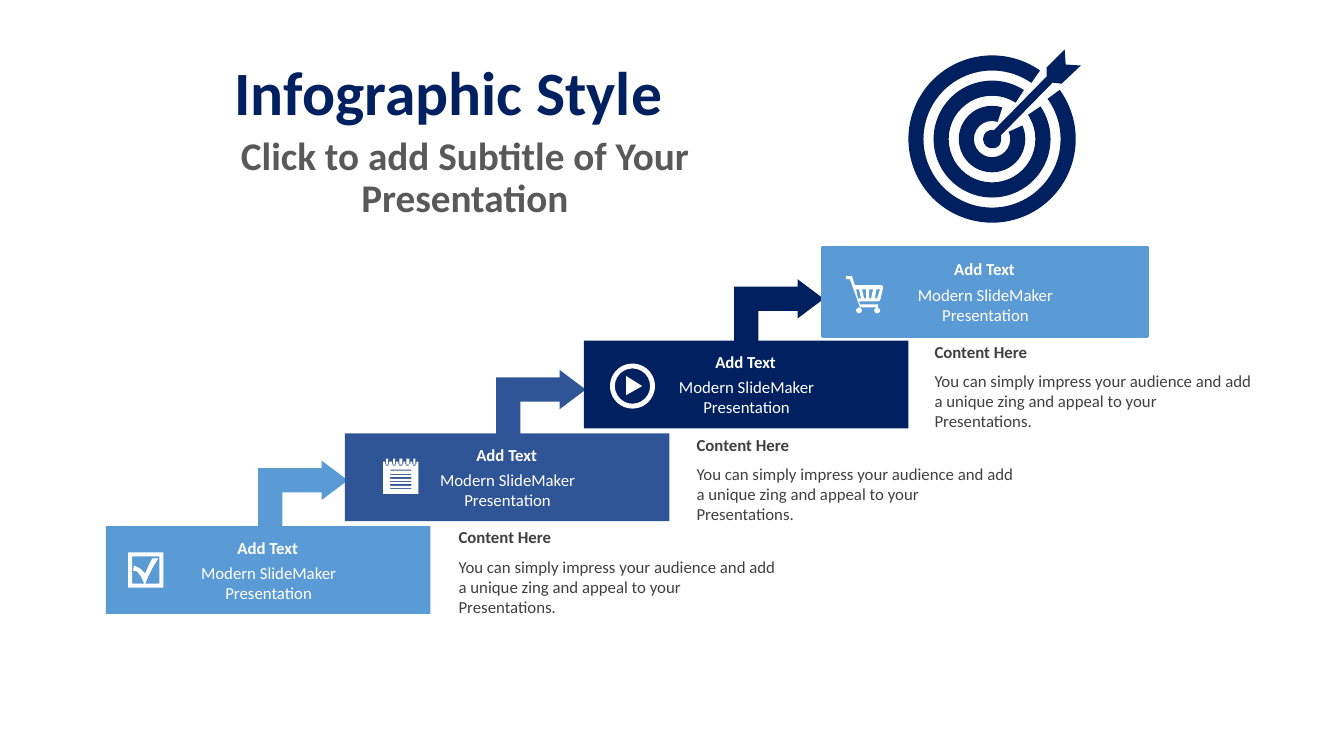
from math import cos, radians, sin

from pptx import Presentation
from pptx.dml.color import RGBColor
from pptx.enum.shapes import MSO_SHAPE
from pptx.enum.text import MSO_ANCHOR, PP_ALIGN
from pptx.util import Inches, Pt

RECTANGLE, BENT_ARROW = MSO_SHAPE.RECTANGLE, MSO_SHAPE.BENT_UP_ARROW
DONUT, BLOCK_ARC = MSO_SHAPE.DONUT, MSO_SHAPE.BLOCK_ARC
CENTER, LEFT = PP_ALIGN.CENTER, PP_ALIGN.LEFT
MIDDLE, TOP = MSO_ANCHOR.MIDDLE, MSO_ANCHOR.TOP
SKY = RGBColor(0x5B, 0x9B, 0xD5)
BLUE = RGBColor(0x2F, 0x55, 0x97)
NAVY = RGBColor(0x00, 0x20, 0x60)
GRAY = RGBColor(0x59, 0x59, 0x59)
DARK = RGBColor(0x40, 0x40, 0x40)
WHITE = RGBColor(0xFF, 0xFF, 0xFF)
FONT = "Calibri"

# Content
TITLE = "Infographic Style"
SUBTITLE = "Click to add Subtitle of Your Presentation"
STEP_HEAD, STEP_BODY = "Add Text", "Modern SlideMaker Presentation"
NOTE_HEAD = "Content Here"
NOTE_BODY = ("You can simply impress your audience and add a unique zing "
             "and appeal to your Presentations.")
# Colour, icon and icon offset inside the box, from the lowest step up
STEPS = [
    (SKY, "check", (0.22, 0.26)),
    (BLUE, "notepad", (0.38, 0.25)),
    (NAVY, "play", (0.26, 0.23)),
    (SKY, "cart", (0.23, 0.28)),
]

# Staircase grid, in inches
STEP_LEFT, STEP_TOP = 1.05, 5.22
STEP_RIGHT, STEP_UP = 2.37, 0.92
STEP_W, STEP_H = 3.22, 0.87
ARROW_LEFT, ARROW_TOP, ARROW_W, ARROW_H = 2.68, 4.45, 0.65, 0.89
ARROW_RIGHT, ARROW_UP = 2.36, 0.9
NOTE_LEFT, NOTE_TOP, NOTE_W = 4.45, 5.18, 3.35
NOTE_RIGHT, NOTE_UP = 2.36, 0.92


# Outlines, in hundredths of an inch from the icon's corner
def arc(cx, cy, r, start, end, count):
    angles = [radians(start + (end - start) * i / count) for i in range(count + 1)]
    return [(cx + r * cos(a), cy + r * sin(a)) for a in angles]


def rect(left, top, right, bottom):
    return [(left, top), (right, top), (right, bottom), (left, bottom)]


def notepad():
    holes = [4.2 + 6.7 * i for i in range(5)]
    page = [(0, 3)]
    for x in holes:
        page += [(x - 2.3, 3)] + arc(x, 5, 2.3, 180, 0, 3) + [(x + 2.3, 3)]
    page += [(35, 3), (35, 34.5), (0, 34.5)]
    rings = [rect(x - 1.2, 0, x + 1.2, 6) for x in holes]
    lines = [rect(7, 10.9 + 3.6 * i, 28, 12.4 + 3.6 * i) for i in range(6)]
    return [page] + rings + lines


ICONS = {
    "check": [
        rect(0, 0, 35, 35),
        [(4, 4), (4, 31), (16, 31), (13, 24), (9, 19), (5, 18), (6, 13), (12, 15.5),
         (17, 21), (20, 14), (24, 6), (30, 6), (25, 14), (20, 24), (17, 31),
         (31, 31), (31, 4)],
    ],
    "notepad": notepad(),
    "play": [[(16, 12), (32, 22), (16, 31)]],
    "cart": [
        [(0, 0), (6, 0), (8.5, 9.3), (36, 9.3), (37, 11), (34, 24), (32, 25.3),
         (13, 25.3), (14, 28), (32, 28), (32, 31), (14, 31), (4, 3.2), (0, 3.2)],
        [(10, 13), (13, 13), (15, 22), (12, 22)],
        [(16, 13), (20, 13), (20, 22), (18, 22)],
        [(23, 13), (27, 13), (25, 22), (23, 22)],
        [(30, 13), (34, 13), (31, 22), (29, 22)],
        arc(13, 34, 3.2, 0, 360, 8), arc(31, 34, 3.2, 0, 360, 8),
    ],
    "target": [
        [(155, 0), (156, 15), (171, 16), (152, 34), (143, 33), (92, 85)]
        + arc(83, 89, 9.3, -20, 280, 12) + [(85, 80), (137, 27), (137, 18)],
    ],
}
# Centre, radius, thickness, and start and end angle where the ring is open
RINGS = {
    "play": [(22.3, 22, 22.3, 4.8, None)],
    "target": [(83, 89, 33, 15, (336, 288)), (83, 89, 58, 15, (326, 303)),
               (83, 89, 83, 15, (324, 305))],
}

prs = Presentation()
prs.slide_width, prs.slide_height = Inches(13.33), Inches(7.5)
slide = prs.slides.add_slide(prs.slide_layouts[6])
shapes = slide.shapes


def paint(shape, color):
    shape.shadow.inherit = False
    shape.fill.solid()
    shape.fill.fore_color.rgb = color
    shape.line.fill.background()
    return shape


def add_preset(preset, left, top, width, height, color, adjustments=()):
    shape = paint(shapes.add_shape(preset, *map(Inches, (left, top, width, height))), color)
    for n, value in enumerate(adjustments):
        shape.adjustments[n] = value
    return shape


def add_icon(name, left, top, color):
    for cx, cy, r, thickness, opening in RINGS.get(name, []):
        share = thickness / (2 * r)
        # Angles count in 60000ths of a degree, adjustments in 100000ths
        values = [angle * 0.6 for angle in opening] + [share] if opening else [share]
        add_preset(BLOCK_ARC if opening else DONUT, left + (cx - r) / 100,
                   top + (cy - r) / 100, r / 50, r / 50, color, values)
    outlines = [[(left * 100 + x, top * 100 + y) for x, y in outline]
                for outline in ICONS[name]]
    builder = shapes.build_freeform(*outlines[0][0], scale=Inches(0.01))
    for n, points in enumerate(outlines):
        if n:
            builder.move_to(*points[0])
        builder.add_line_segments(points[1:], close=True)
    paint(builder.convert_to_shape(), color)


def add_text(text, left, top, width, height, size, color,
             bold=False, align=CENTER, anchor=MIDDLE, spacing=None):
    frame = shapes.add_textbox(*map(Inches, (left, top, width, height))).text_frame
    frame.word_wrap = True
    frame.vertical_anchor = anchor
    line = frame.paragraphs[0]
    line.text = text
    line.alignment, line.line_spacing = align, spacing
    line.font.name, line.font.size, line.font.bold = FONT, Pt(size), bold
    line.font.color.rgb = color


# Heading and target
add_text(TITLE, 0.33, 0.55, 8.24, 0.79, 44, NAVY, bold=True, spacing=0.9)
add_text(SUBTITLE, 1.27, 1.34, 6.68, 0.87, 28, GRAY, bold=True, spacing=0.9)
add_icon("target", 9.01, 0.49, NAVY)

# Staircase
last = len(STEPS) - 1
for i, (color, icon, (icon_x, icon_y)) in enumerate(STEPS):
    left, top = STEP_LEFT + i * STEP_RIGHT, STEP_TOP - i * STEP_UP
    box = add_preset(RECTANGLE, left, top, STEP_W, STEP_H, color)
    if i == last:
        box.line.color.rgb = color
        box.line.width = Pt(3)
    add_text(STEP_HEAD, left + 0.74, top + 0.06, 1.73, 0.3, 12, WHITE, bold=True)
    add_text(STEP_BODY, left + 0.75, top + 0.31, 1.73, 0.5, 12, WHITE)
    add_icon(icon, left + icon_x, top + icon_y, WHITE)

    # Arrow to the next step, with the note under it
    if i < last:
        arrow = add_preset(BENT_ARROW, ARROW_LEFT + i * ARROW_RIGHT, ARROW_TOP - i * ARROW_UP,
                           ARROW_W, ARROW_H, color, (0.37, 0.3, 0.4))
        arrow.rotation = 270
        arrow.element.spPr.xfrm.set("flipV", "1")
        note_x, note_y = NOTE_LEFT + i * NOTE_RIGHT, NOTE_TOP - i * NOTE_UP
        add_text(NOTE_HEAD, note_x, note_y, NOTE_W, 0.3, 12, DARK, True, LEFT, TOP)
        add_text(NOTE_BODY, note_x, note_y + 0.29, NOTE_W, 0.71, 12, DARK, False, LEFT, TOP)

prs.save("out.pptx")
